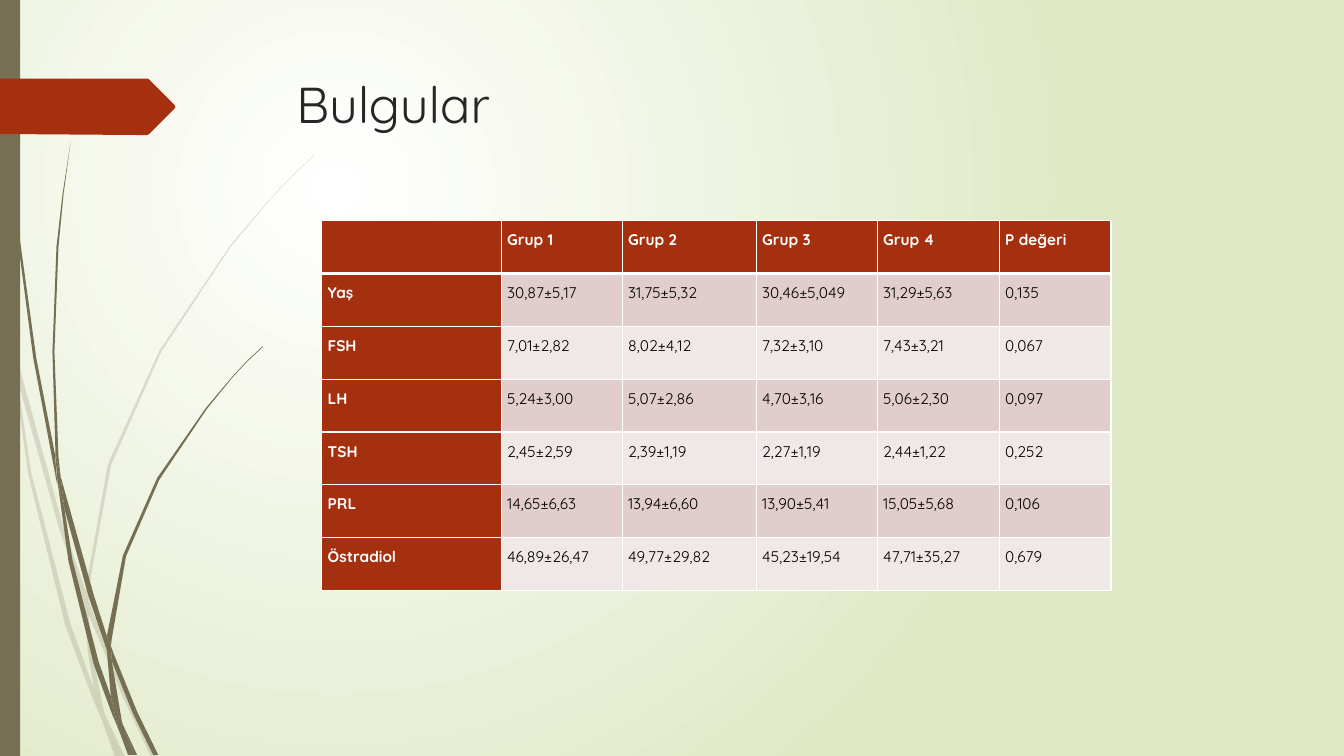
"""Build the "Bulgular" results slide: a group comparison table beside a grass ornament."""
from lxml.etree import SubElement
from pptx import Presentation
from pptx.dml.color import RGBColor
from pptx.enum.text import MSO_ANCHOR, MSO_AUTO_SIZE, PP_ALIGN
from pptx.enum.shapes import MSO_SHAPE
from pptx.oxml import parse_xml
from pptx.oxml.ns import nsdecls, qn
from pptx.util import Inches, Pt

COLORS = {
    "white": "FFFFFF", "pale_green": "DFE8C4", "olive": "766F54", "red": "A53010",
    "title": "262626", "text": "000000", "odd_row": "E1CDCC", "even_row": "F0E8E7",
}
FONT = "Quicksand"
TITLE = "Bulgular"
ROWS = [
    ["", "Grup 1", "Grup 2", "Grup 3", "Grup 4", "P değeri"],
    ["Yaş", "30,87±5,17", "31,75±5,32", "30,46±5,049", "31,29±5,63", "0,135"],
    ["FSH", "7,01±2,82", "8,02±4,12", "7,32±3,10", "7,43±3,21", "0,067"],
    ["LH", "5,24±3,00", "5,07±2,86", "4,70±3,16", "5,06±2,30", "0,097"],
    ["TSH", "2,45±2,59", "2,39±1,19", "2,27±1,19", "2,44±1,22", "0,252"],
    ["PRL", "14,65±6,63", "13,94±6,60", "13,90±5,41", "15,05±5,68", "0,106"],
    ["Östradiol", "46,89±26,47", "49,77±29,82", "45,23±19,54", "47,71±35,27", "0,679"],
]
COLUMN_WIDTHS = [1.78, 1.2, 1.33, 1.2, 1.21, 1.11]
TABLE_LEFT, TABLE_TOP, TABLE_HEIGHT = 3.19, 2.19, 3.67

PALE_BLADES = [
    [(0.11, 3.5), (0.09, 3.22), (0, 2.82), (0, 2.99), (0.1, 3.44)],
    [(0.58, 5.22), (0.84, 5.99), (0.85, 5.86), (0.62, 5.2), (0.14, 3.45), (0.17, 3.76)],
    [(0.92, 6.07), (0.88, 5.96), (0.88, 6.1), (1.23, 6.94), (1.5, 7.51), (1.55, 7.51),
     (1.27, 6.92)],
    [(1.19, 7.51), (1.24, 7.51), (1.05, 7.11)],
    [(0.93, 6.83), (0.7, 6.19), (0.31, 4.69), (0.17, 3.76), (0.11, 3.5), (0.28, 4.7),
     (0.65, 6.21), (0.92, 6.93), (1.01, 7.14), (0.99, 7.07)],
    [(0.84, 5.99), (0.87, 6.46), (0.93, 6.83), (0.96, 6.92), (1.05, 7.11), (1.03, 7.06),
     (0.91, 6.46), (0.88, 6.1), (0.88, 6.08)],
    [(0.88, 5.84), (1.1, 4.62), (1.6, 3.49), (2.29, 2.45), (2.68, 1.98), (2.9, 1.75),
     (3.12, 1.54), (3.12, 1.53), (2.89, 1.75), (2.68, 1.97), (2.28, 2.44), (1.58, 3.48),
     (1.07, 4.61), (0.85, 5.84), (0.85, 5.86), (0.88, 5.96)],
    [(1.01, 7.14), (1.14, 7.51), (1.19, 7.51)],
    [(0.88, 6.08), (0.88, 6.1), (0.88, 5.96), (0.85, 5.86), (0.84, 5.99)],
    [(0.96, 6.92), (0.93, 6.83), (0.99, 7.07), (1.01, 7.14), (1.19, 7.51), (1.05, 7.11)],
]
DARK_BLADES = [
    [(0.07, 1.1), (0.17, 2.33), (0.33, 3.55), (0.56, 4.77), (0.57, 4.81), (0.55, 4.57),
     (0.55, 4.53), (0.36, 3.55), (0.19, 2.32), (0.08, 1.09), (0.05, 0.48), (0.04, 0),
     (0.03, 0), (0.04, 0.48)],
    [(0.88, 5.92), (1.06, 6.45), (1.06, 6.33), (1.06, 6.31), (0.93, 5.9), (0.6, 4.72),
     (0.64, 5.05)],
    [(1.13, 6.49), (1.1, 6.41), (1.11, 6.56), (1.32, 7.08), (1.52, 7.49), (1.57, 7.49),
     (1.36, 7.06)],
    [(1.1, 6.91), (0.98, 6.57), (0.72, 5.56), (0.64, 5.05), (0.57, 4.77), (0.68, 5.57),
     (0.93, 6.59), (1.11, 7.08), (1.17, 7.22), (1.16, 7.17)],
    [(0.6, 4.72), (0.58, 4.53), (0.54, 3.49), (0.58, 2.45), (0.63, 1.93), (0.7, 1.41),
     (0.62, 1.93), (0.56, 2.45), (0.52, 3.49), (0.55, 4.49)],
    [(1.33, 7.49), (1.36, 7.49), (1.22, 7.19)],
    [(0.57, 4.77), (0.64, 5.05), (0.6, 4.72), (0.55, 4.49), (0.55, 4.53)],
    [(1.11, 6.33), (1.25, 5.52), (1.58, 4.76), (2.05, 4.06), (2.31, 3.74), (2.45, 3.59),
     (2.61, 3.44), (2.6, 3.44), (2.45, 3.58), (2.31, 3.73), (2.04, 4.05), (1.56, 4.74),
     (1.22, 5.51), (1.06, 6.31), (1.1, 6.41)],
    [(1.17, 7.22), (1.27, 7.49), (1.31, 7.49)],
    [(1.06, 6.45), (1.1, 6.91), (1.16, 7.06), (1.22, 7.19), (1.21, 7.16), (1.11, 6.56),
     (1.09, 6.51)],
    [(1.06, 6.45), (1.09, 6.51), (1.11, 6.56), (1.1, 6.41), (1.06, 6.31), (1.06, 6.33)],
    [(1.16, 7.06), (1.1, 6.91), (1.16, 7.17), (1.17, 7.22), (1.3, 7.49), (1.33, 7.49),
     (1.22, 7.19)],
]
ARROW_TAG = [(1.73, 1.08), (1.48, 1.33), (1.46, 1.34), (1.36, 1.34), (0, 1.33), (0, 0.78),
             (1.46, 0.78), (1.48, 0.79), (1.73, 1.04), (1.74, 1.06)]


def rgb(name):
    """Return the named colour."""
    return RGBColor.from_string(COLORS[name])


def paint(shape, color, alpha=100):
    """Give a shape a plain fill without line or shadow."""
    shape.shadow.inherit = False
    shape.line.fill.background()
    shape.fill.solid()
    shape.fill.fore_color.rgb = rgb(color)
    if alpha < 100:
        tint = shape.element.spPr.find(qn("a:solidFill"))[0]
        SubElement(tint, qn("a:alpha"), val=str(alpha * 1000))


def add_outline(slide, points, color, alpha=100):
    """Draw a closed outline through points given in inches."""
    corners = [(Inches(x), Inches(y)) for x, y in points]
    builder = slide.shapes.build_freeform(*corners[0])
    builder.add_line_segments(corners[1:], close=True)
    paint(builder.convert_to_shape(), color, alpha)


def write(frame, text, size, color, bold=False, spacing=None):
    """Write one left-aligned paragraph into a text frame."""
    para = frame.paragraphs[0]
    para.alignment = PP_ALIGN.LEFT
    para.line_spacing = spacing
    span = para.add_run()
    span.text = text
    span.font.name, span.font.size, span.font.bold = FONT, Pt(size), bold
    span.font.color.rgb = rgb(color)


def add_borders(cell, **widths):
    """Add white borders, with widths in points by side."""
    properties = cell._tc.get_or_add_tcPr()
    for place, side in enumerate("LRTB"):
        properties.insert(place, parse_xml(
            f'<a:ln{side} {nsdecls("a")} w="{Pt(widths.get(side, 1))}"><a:solidFill>'
            f'<a:srgbClr val="{COLORS["white"]}"/></a:solidFill></a:ln{side}>'))


def set_background(slide):
    """Fill the background with a round white-to-green gradient."""
    fill = slide.background.fill
    fill.gradient()
    for stop, color in zip(fill.gradient_stops, ("white", "pale_green")):
        stop.color.rgb = rgb(color)
    linear = slide.element.find(".//" + qn("a:lin"))
    linear.getparent().replace(linear, parse_xml(
        f'<a:path {nsdecls("a")} path="circle">'
        '<a:fillToRect l="50000" t="50000" r="100000" b="100000"/></a:path>'))


def add_ornament(slide):
    """Draw the grass blades, the side bar and the arrow tag."""
    for blades, alpha in ((PALE_BLADES, 20), (DARK_BLADES, 100)):
        for blade in blades:
            add_outline(slide, blade, "olive", alpha)
    bar = slide.shapes.add_shape(MSO_SHAPE.RECTANGLE, 0, 0, Inches(0.2), Inches(7.5))
    paint(bar, "olive")
    add_outline(slide, ARROW_TAG, "red")


def add_title(slide):
    """Place the title in front of the ornament."""
    title = slide.shapes.title
    title.left, title.top = Inches(2.84), Inches(0.68)
    title.width, title.height = Inches(9.75), Inches(1.4)
    frame = title.text_frame
    frame.auto_size, frame.vertical_anchor = MSO_AUTO_SIZE.NONE, MSO_ANCHOR.TOP
    write(frame, TITLE, 36, "title")
    title.element.getparent().append(title.element)


def add_results(slide):
    """Add the table of group values."""
    table = slide.shapes.add_table(
        len(ROWS), len(COLUMN_WIDTHS), Inches(TABLE_LEFT), Inches(TABLE_TOP),
        Inches(sum(COLUMN_WIDTHS)), Inches(TABLE_HEIGHT)).table
    table.first_col = True
    for column, width in zip(table.columns, COLUMN_WIDTHS):
        column.width = Inches(width)
    for r, values in enumerate(ROWS):
        for c, value in enumerate(values):
            cell = table.cell(r, c)
            heading = r == 0 or c == 0
            cell.margin_left = cell.margin_right = Inches(0.06)
            cell.margin_top = cell.margin_bottom = 0
            cell.fill.solid()
            cell.fill.fore_color.rgb = rgb(
                "red" if heading else "odd_row" if r % 2 else "even_row")
            add_borders(cell, T=3 if r == 1 else 1, B=3 if r == 0 else 1)
            if value:
                write(cell.text_frame, value, 11, "white" if heading else "text",
                      bold=heading, spacing=1.5)


def main():
    """Build and save the deck."""
    deck = Presentation()
    deck.slide_width, deck.slide_height = Inches(13.33), Inches(7.5)
    slide = deck.slides.add_slide(deck.slide_layouts[5])
    set_background(slide)
    add_ornament(slide)
    add_title(slide)
    add_results(slide)
    deck.save("out.pptx")


if __name__ == "__main__":
    main()
